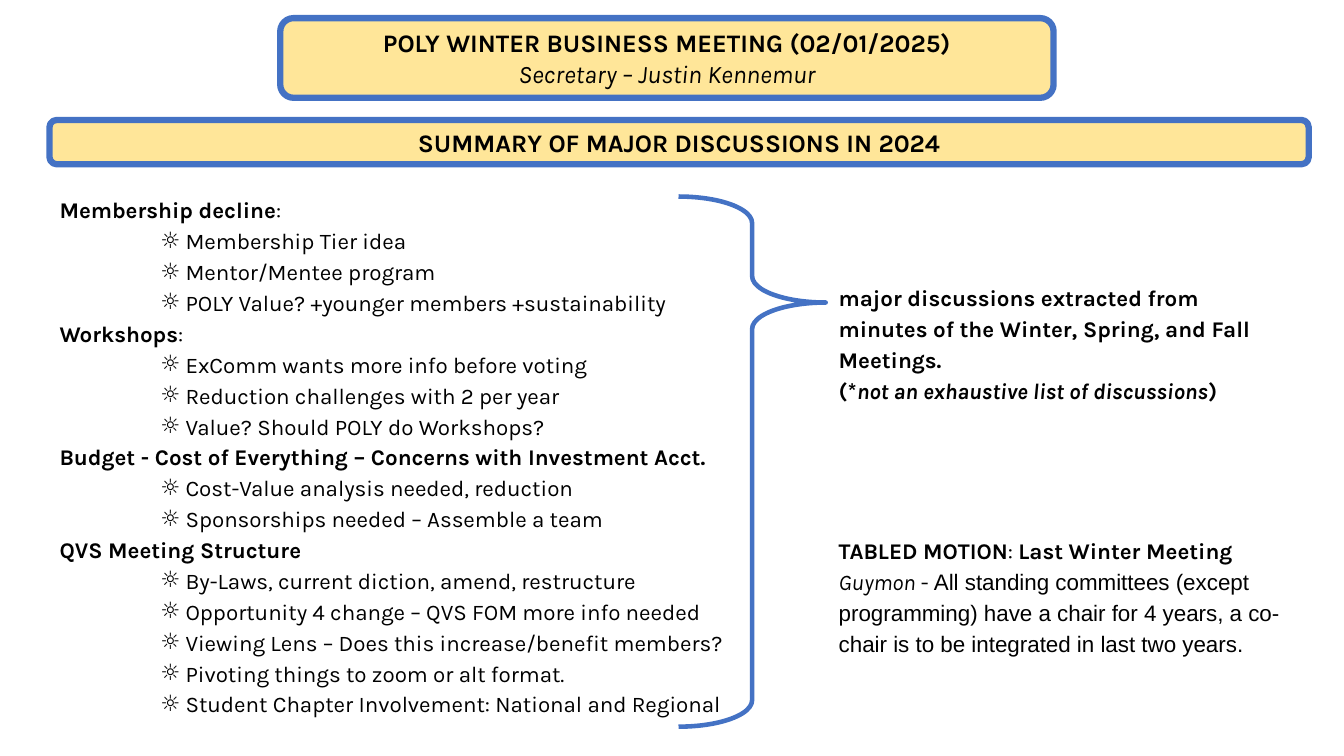
from dataclasses import dataclass
from typing import NamedTuple, Optional

from pptx import Presentation
from pptx.dml.color import RGBColor
from pptx.enum.shapes import MSO_SHAPE as Kind
from pptx.enum.text import MSO_ANCHOR as Anchor, MSO_AUTO_SIZE as Fit, PP_ALIGN as Align
from pptx.oxml.ns import qn
from pptx.util import Emu, Pt

PX = 9144  # EMU in one px, 100 px to the inch
BLACK, BLUE, CREAM = "000000", "4472C4", "FFE699"
FACE = "Karla"
STEP, HANG = 125, 25  # text indent of a point, and the width of its bullet


class Box(NamedTuple):
    left: int
    top: int
    width: int
    height: int


class Run(NamedTuple):
    """A piece of text; None takes the value of the paragraph."""
    text: str
    bold: Optional[bool] = None
    italic: Optional[bool] = None
    font: Optional[str] = None


@dataclass
class Para:
    runs: list[Run]
    bold: bool = False
    italic: bool = False


@dataclass
class Topic:
    head: list[Run]
    points: list[str]


@dataclass
class Note:
    box: Box
    paras: list[Para]


TITLE = [
    Para([Run("POLY WINTER BUSINESS MEETING (02/01/2025)")], bold=True),
    Para([Run("Secretary – Justin Kennemur")], italic=True),
]
SUMMARY = [Para([Run("SUMMARY OF MAJOR DISCUSSIONS IN 2024")], bold=True)]
TOPICS = [
    Topic([Run("Membership decline"), Run(":", bold=False)], [
        "Membership Tier idea",
        "Mentor/Mentee program",
        "POLY Value? +younger members +sustainability",
    ]),
    Topic([Run("Workshops"), Run(":", bold=False)], [
        "ExComm wants more info before voting",
        "Reduction challenges with 2 per year",
        "Value? Should POLY do Workshops?",
    ]),
    Topic([Run("Budget - Cost of Everything – Concerns with Investment Acct.")], [
        "Cost-Value analysis needed, reduction",
        "Sponsorships needed – Assemble a team",
    ]),
    Topic([Run("QVS Meeting Structure")], [
        "By-Laws, current diction, amend, restructure",
        "Opportunity 4 change – QVS FOM more info needed",
        "Viewing Lens – Does this increase/benefit members?",
        "Pivoting things to zoom or alt format.",
        "Student Chapter Involvement: National and Regional",
    ]),
]
NOTES = [
    Note(Box(822, 524, 462, 194), [
        Para([Run("TABLED MOTION"), Run(": ", bold=False),
              Run("Last Winter Meeting")], bold=True),
        Para([Run("Guymon", italic=True), Run(" - "),
              Run("All standing committees (except programming) have a chair "
                  "for 4 years, a co-chair is to be integrated in last two years.",
                  font="Arial")]),
    ]),
    Note(Box(822, 273, 462, 163), [
        Para([Run("major discussions extracted from minutes of the Winter, "
                  "Spring, and Fall Meetings.")], bold=True),
        Para([Run("(*"), Run("not an exhaustive list of discussions", italic=True),
              Run(")")], bold=True),
    ]),
]


def emu(box: Box) -> list[Emu]:
    return [Emu(n * PX) for n in box]


def color(code: str) -> RGBColor:
    return RGBColor.from_string(code)


def place(shape, box: Box) -> None:
    shape.left, shape.top, shape.width, shape.height = emu(box)


def draw(shapes, kind: Kind, box: Box, width: float, fill: Optional[str] = None):
    shape = shapes.add_shape(kind, *emu(box))
    shape.shadow.inherit = False
    shape.line.color.rgb = color(BLUE)
    shape.line.width = Pt(width)
    if fill:
        shape.fill.solid()
        shape.fill.fore_color.rgb = color(fill)
    else:
        shape.fill.background()
    return shape


def write(frame, paras: list[Para], size: int, align: Align, space: float) -> None:
    frame.word_wrap = True
    frame.auto_size = Fit.NONE
    for i, para in enumerate(paras):
        line = frame.add_paragraph() if i else frame.paragraphs[0]
        line.alignment = align
        line.line_spacing = space
        line.space_before = line.space_after = Pt(0)
        font = line.font
        font.name, font.size = FACE, Pt(size)
        font.bold, font.italic = para.bold, para.italic
        font.color.rgb = color(BLACK)
        for run in para.runs:
            part = line.add_run()
            part.text = run.text
            part.font.bold, part.font.italic = run.bold, run.italic
            part.font.name = run.font


def head(shape, paras: list[Para]) -> None:
    shape.text_frame.vertical_anchor = Anchor.MIDDLE
    write(shape.text_frame, paras, 18, Align.CENTER, 1.0)


def bullet(line, mark: Optional[str]) -> None:
    props = line._p.get_or_add_pPr()
    props.set("marL", str(STEP * PX if mark else 0))
    props.set("indent", str(-HANG * PX if mark else 0))
    tags = {"a:buFont": {"typeface": FACE}, "a:buChar": {"char": mark}}
    for tag, values in (tags if mark else {"a:buNone": {}}).items():
        item = props.makeelement(qn(tag), values)
        props.find(qn("a:defRPr")).addprevious(item)


def agenda(shape, topics: list[Topic]) -> None:
    paras, marks = [], []
    for topic in topics:
        paras.append(Para(topic.head, bold=True))
        paras += [Para([Run(point)]) for point in topic.points]
        marks += [None] + ["☼"] * len(topic.points)
    write(shape.text_frame, paras, 16, Align.LEFT, 1.15)
    for line, mark in zip(shape.text_frame.paragraphs, marks):
        bullet(line, mark)


def main() -> None:
    deck = Presentation()
    deck.slide_width, deck.slide_height = Emu(1333 * PX), Emu(750 * PX)
    slide = deck.slides.add_slide(deck.slide_layouts[1])
    shapes = slide.shapes

    title, body = slide.placeholders
    top = Box(278, 18, 767, 79)
    plate = draw(shapes, Kind.ROUNDED_RECTANGLE, top, 4.5, CREAM)
    title.element.addprevious(plate.element)  # behind the title
    place(title, top)
    head(title, TITLE)
    place(body, Box(49, 186, 956, 535))
    agenda(body, TOPICS)

    strip = draw(shapes, Kind.ROUNDED_RECTANGLE, Box(49, 119, 1249, 44), 4.5, CREAM)
    head(strip, SUMMARY)

    brace = draw(shapes, Kind.RIGHT_BRACE, Box(673, 195, 146, 526), 3.25)
    brace.adjustments[0], brace.adjustments[1] = 0.18, 0.2

    for note in NOTES:
        text = shapes.add_textbox(*emu(note.box))
        write(text.text_frame, note.paras, 16, Align.LEFT, 1.15)

    deck.save("out.pptx")


if __name__ == "__main__":
    main()
